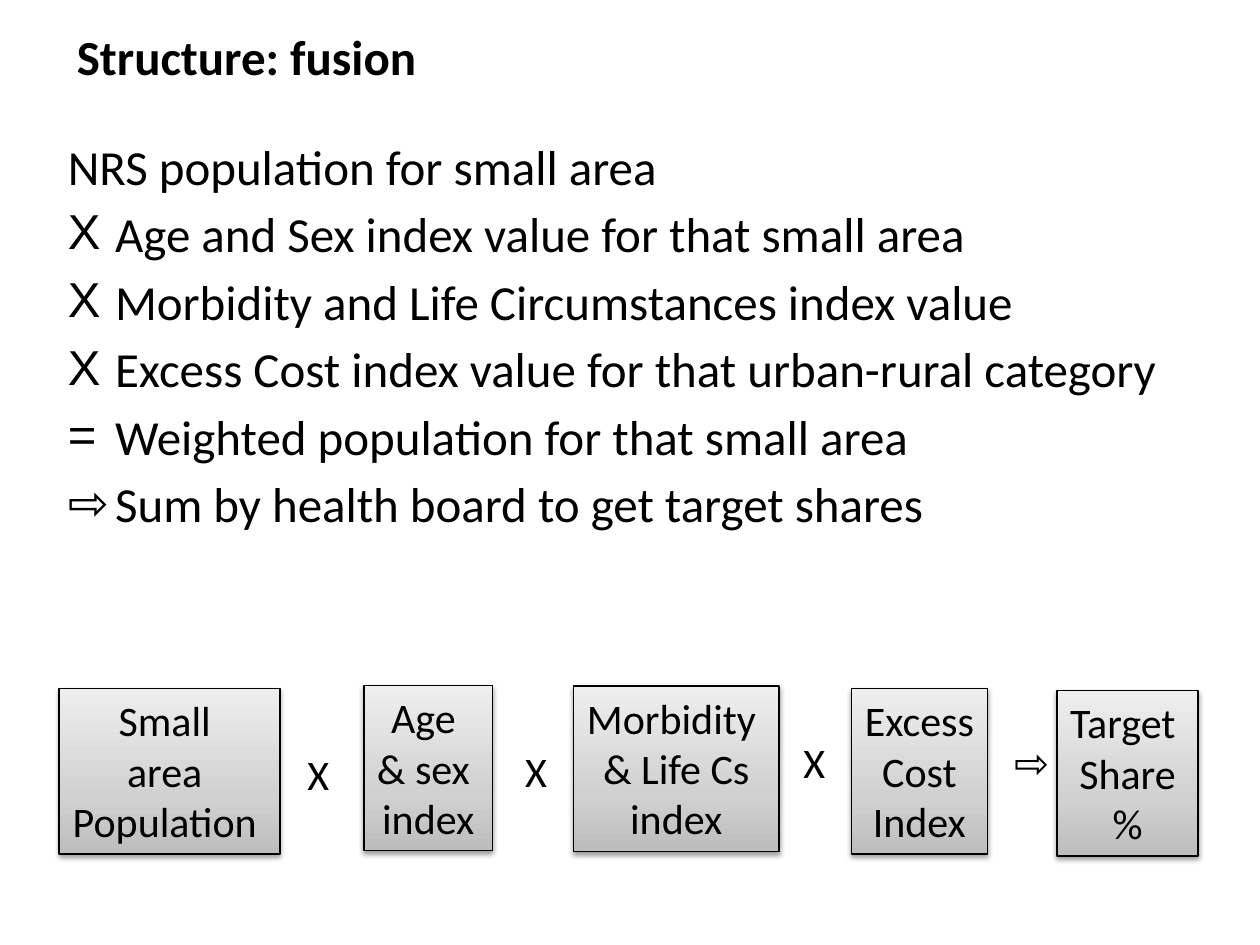
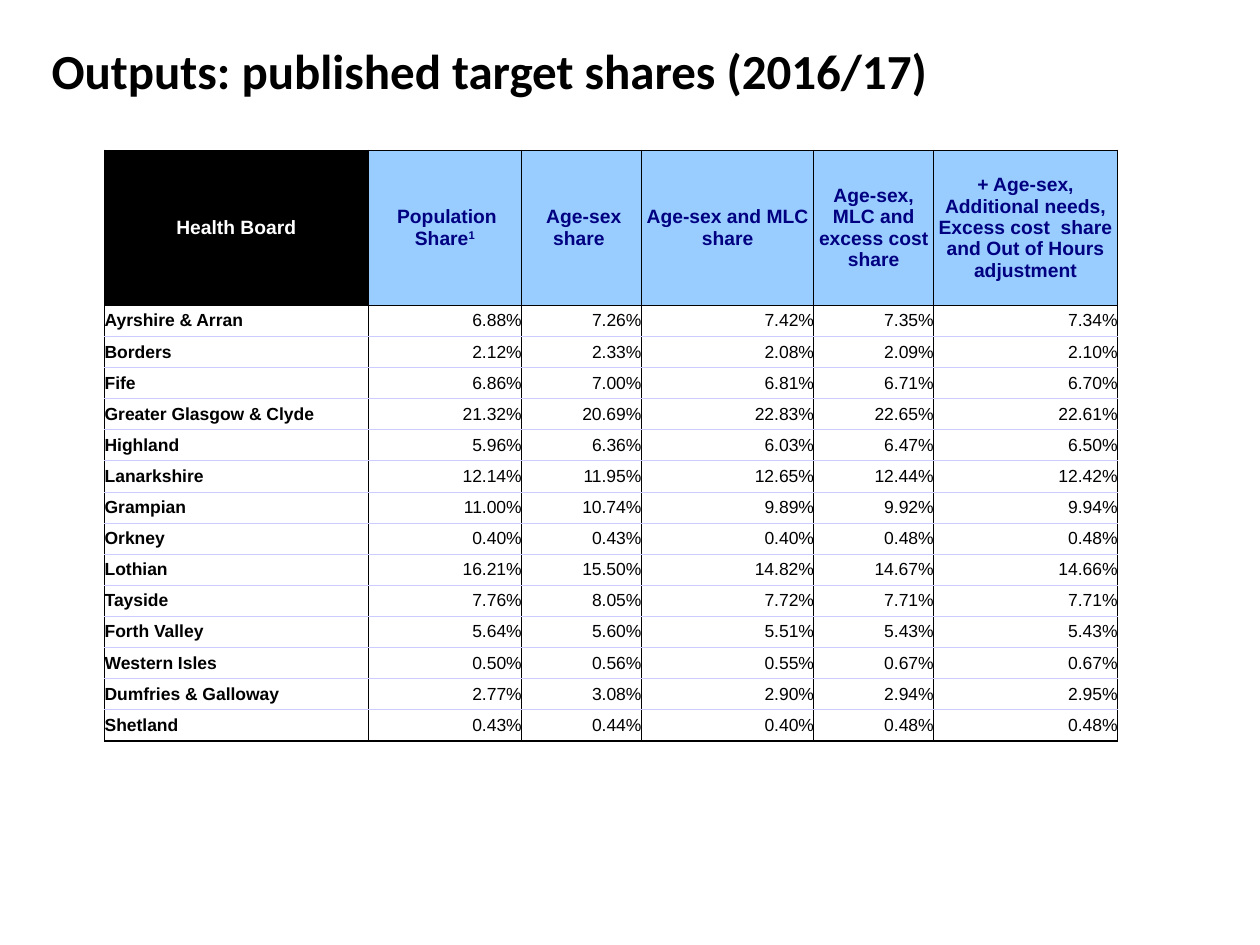
from copy import deepcopy
from dataclasses import dataclass

from pptx import Presentation
from pptx import util as u
from pptx.dml.color import RGBColor
from pptx.enum import shapes, text
from pptx.oxml import parse_xml
from pptx.oxml.ns import nsdecls, qn


@dataclass(frozen=True)
class Theme:
    black: str = "000000"
    white: str = "FFFFFF"
    navy: str = "000080"
    header_blue: str = "99CCFF"
    rule: str = "CCCCFF"
    box_stops: tuple = ((0, "BDBDBD"), (0.35, "D1D1D1"), (1, "EEEEEE"))
    main_font: str = "Calibri"
    table_font: str = "Arial"
    large: int = 28
    formula: int = 24
    header: int = 11
    figures: int = 10
    lead: int = 9
    thin: float = 0.5
    thick: float = 1


THEME = Theme()
LEFT, CENTER, RIGHT = (text.PP_ALIGN.LEFT, text.PP_ALIGN.CENTER, text.PP_ALIGN.RIGHT)

FUSION_TITLE = ("Structure: fusion", (36.7, 9.4, 648, 45.4))
STEPS_AREA = (31.7, 74.2, 674.6, 238.3)
STEPS = [
    ("", "NRS population for small area"),
    ("X", "Age and Sex index value for that small area"),
    ("X", "Morbidity and Life Circumstances index value"),
    ("X", "Excess Cost index value for that urban-rural category"),
    ("=", "Weighted population for that small area"),
    ("⇨", "Sum by health board to get target shares"),
]
STEP_INDENT = 27
FACTOR_HEIGHT = 94.5
FACTORS = [
    (33.8, 393.6, 126.2, ("Small ", "area ", "Population ")),
    (208, 391.7, 73.4, ("Age ", "& sex ", "index")),
    (327.6, 392, 117.6, ("Morbidity ", "& Life Cs", "index")),
    (486.6, 393.6, 77.6, ("Excess", "Cost", "Index")),
    (604, 394.6, 80.6, ("Target ", "Share", "%")),
]
OPERATOR_SIZE = (27.4, 36.4)
OPERATORS = [(168.5, 424, "X"), (293, 422.6, "X"), (452, 417.6, "X"), (572.4, 417.6, "⇨")]

SHARES_TITLE = ("Outputs: published target shares (2016/17)", (22.3, 8, 648, 64))
TABLE_CORNER = (59.8, 85.9)
COLUMN_WIDTHS = [150.5, 87.8, 68.4, 98.6, 68.4, 105.1]
HEADER_HEIGHT, ROW_HEIGHT = 88.6, 17.8
HEADINGS = [
    "Health Board",
    "Population Share",
    " Age-sex share ",
    "Age-sex and MLC share",
    "Age-sex, MLC and excess cost share",
    "+ Age-sex, Additional needs, Excess cost  share and Out of Hours adjustment",
]
FOOTNOTED_COLUMN = 1
SHARES = [
    ("Ayrshire & Arran", 6.88, 7.26, 7.42, 7.35, 7.34),
    ("Borders", 2.12, 2.33, 2.08, 2.09, 2.10),
    ("Fife", 6.86, 7.00, 6.81, 6.71, 6.70),
    ("Greater Glasgow & Clyde", 21.32, 20.69, 22.83, 22.65, 22.61),
    ("Highland", 5.96, 6.36, 6.03, 6.47, 6.50),
    ("Lanarkshire", 12.14, 11.95, 12.65, 12.44, 12.42),
    ("Grampian", 11.00, 10.74, 9.89, 9.92, 9.94),
    ("Orkney", 0.40, 0.43, 0.40, 0.48, 0.48),
    ("Lothian", 16.21, 15.50, 14.82, 14.67, 14.66),
    ("Tayside", 7.76, 8.05, 7.72, 7.71, 7.71),
    ("Forth Valley", 5.64, 5.60, 5.51, 5.43, 5.43),
    ("Western Isles", 0.50, 0.56, 0.55, 0.67, 0.67),
    ("Dumfries & Galloway", 2.77, 3.08, 2.90, 2.94, 2.95),
    ("Shetland", 0.43, 0.44, 0.40, 0.48, 0.48),
]


def points(values):
    return [u.Pt(value) for value in values]


def add_span(para, words, size, color=THEME.black, bold=False, font=THEME.main_font):
    span = para.add_run()
    span.text = words
    span.font.name = font
    span.font.size = u.Pt(size)
    span.font.bold = bold
    span.font.color.rgb = RGBColor.from_string(color)
    return span


def add_lines(frame, lines, size, align=LEFT):
    for index, line in enumerate(lines):
        para = frame.add_paragraph() if index else frame.paragraphs[0]
        para.alignment = align
        add_span(para, line, size)


def add_page(deck, title, area):
    page = deck.slides.add_slide(deck.slide_layouts[5])
    box = page.shapes.title
    box.left, box.top, box.width, box.height = points(area)
    box.text_frame.vertical_anchor = text.MSO_ANCHOR.MIDDLE
    para = box.text_frame.paragraphs[0]
    para.alignment = LEFT
    add_span(para, title, THEME.large, bold=True)
    return page


def add_steps(page):
    frame = page.shapes.add_textbox(*points(STEPS_AREA)).text_frame
    frame.word_wrap = True
    add_lines(frame, [words for _, words in STEPS], THEME.large)
    for para, (mark, _) in zip(frame.paragraphs, STEPS):
        para.space_before = u.Pt(5)
        if mark:
            props = para._p.get_or_add_pPr()
            props.set("marL", str(u.Pt(STEP_INDENT)))
            props.set("indent", str(-u.Pt(STEP_INDENT)))
            props.append(parse_xml(f'<a:buFont {nsdecls("a")} typeface="{THEME.table_font}"/>'))
            props.append(parse_xml(f'<a:buChar {nsdecls("a")} char="{mark}"/>'))


def shade_box(box):
    box.fill.gradient()
    box.fill.gradient_angle = 90
    stop_list = box._element.spPr.find(".//" + qn("a:gsLst"))
    stop_list.insert(1, deepcopy(stop_list[0]))
    for stop, (position, color) in zip(box.fill.gradient_stops, THEME.box_stops):
        stop.position = position
        stop.color.rgb = RGBColor.from_string(color)
    box.line.color.rgb = RGBColor.from_string(THEME.black)
    box.line.width = u.Pt(0.75)
    box.shadow.inherit = False
    box._element.spPr.find(qn("a:effectLst")).append(parse_xml(
        f'<a:outerShdw {nsdecls("a")} blurRad="{u.Pt(3.1)}" dist="{u.Pt(1.6)}" '
        f'dir="5400000" rotWithShape="0"><a:srgbClr val="{THEME.black}">'
        '<a:alpha val="38000"/></a:srgbClr></a:outerShdw>'))


def add_formula(page):
    for left, top, width, lines in FACTORS:
        box = page.shapes.add_shape(
            shapes.MSO_SHAPE.RECTANGLE, *points((left, top, width, FACTOR_HEIGHT)))
        shade_box(box)
        frame = box.text_frame
        frame.word_wrap = False
        frame.vertical_anchor = text.MSO_ANCHOR.TOP
        frame.auto_size = text.MSO_AUTO_SIZE.SHAPE_TO_FIT_TEXT
        add_lines(frame, lines, THEME.formula, CENTER)
    for left, top, sign in OPERATORS:
        frame = page.shapes.add_textbox(*points((left, top, *OPERATOR_SIZE))).text_frame
        frame.word_wrap = True
        add_lines(frame, [sign], THEME.formula)


def set_borders(cell, row, column):
    last_row, last_column = len(SHARES), len(HEADINGS) - 1
    inner = (THEME.rule, THEME.thin)
    edge = (THEME.black, THEME.thick)
    side = (THEME.black, THEME.thin)
    borders = {
        "lnL": side,
        "lnR": edge if column == last_column else side,
        "lnT": edge if row <= 1 else inner,
        "lnB": edge if row in (0, last_row) else inner,
    }
    for index, (tag, (color, width)) in enumerate(borders.items()):
        cell._tc.get_or_add_tcPr().insert(index, parse_xml(
            f'<a:{tag} {nsdecls("a")} w="{u.Pt(width)}"><a:solidFill>'
            f'<a:srgbClr val="{color}"/></a:solidFill></a:{tag}>'))


def fill_heading(cell, para, column, words):
    def add_heading(part, size=THEME.header):
        color = THEME.navy if column else THEME.white
        return add_span(para, part, size, color, True, THEME.table_font)

    cell.fill.solid()
    cell.fill.fore_color.rgb = RGBColor.from_string(
        THEME.header_blue if column else THEME.black)
    para.alignment = CENTER
    if column == FOOTNOTED_COLUMN:
        add_heading(" ", THEME.lead)
    add_heading(words)
    if column == FOOTNOTED_COLUMN:
        add_heading("1")._r.get_or_add_rPr().set("baseline", "30000")


def fill_share(cell, para, column, value):
    cell.fill.background()
    para.alignment = RIGHT if column else LEFT
    words = f"{value:.2f}%" if column else value
    add_span(para, words, THEME.figures, bold=not column, font=THEME.table_font)


def add_shares(page):
    height = HEADER_HEIGHT + ROW_HEIGHT * len(SHARES)
    table = page.shapes.add_table(
        len(SHARES) + 1, len(HEADINGS),
        *points((*TABLE_CORNER, sum(COLUMN_WIDTHS), height))).table
    table.first_row = table.horz_banding = False
    for column, width in zip(table.columns, COLUMN_WIDTHS):
        column.width = u.Pt(width)
    for row, values in enumerate([HEADINGS, *SHARES]):
        table.rows[row].height = u.Pt(ROW_HEIGHT if row else HEADER_HEIGHT)
        fill_cell = fill_share if row else fill_heading
        for column, value in enumerate(values):
            cell = table.cell(row, column)
            cell.margin_left = cell.margin_right = cell.margin_top = cell.margin_bottom = 0
            cell.vertical_anchor = text.MSO_ANCHOR.MIDDLE
            fill_cell(cell, cell.text_frame.paragraphs[0], column, value)
            set_borders(cell, row, column)


def main():
    deck = Presentation()
    deck.slide_width, deck.slide_height = points((720, 540))
    fusion_page = add_page(deck, *FUSION_TITLE)
    add_steps(fusion_page)
    add_formula(fusion_page)
    add_shares(add_page(deck, *SHARES_TITLE))
    deck.save("out.pptx")


if __name__ == "__main__":
    main()
